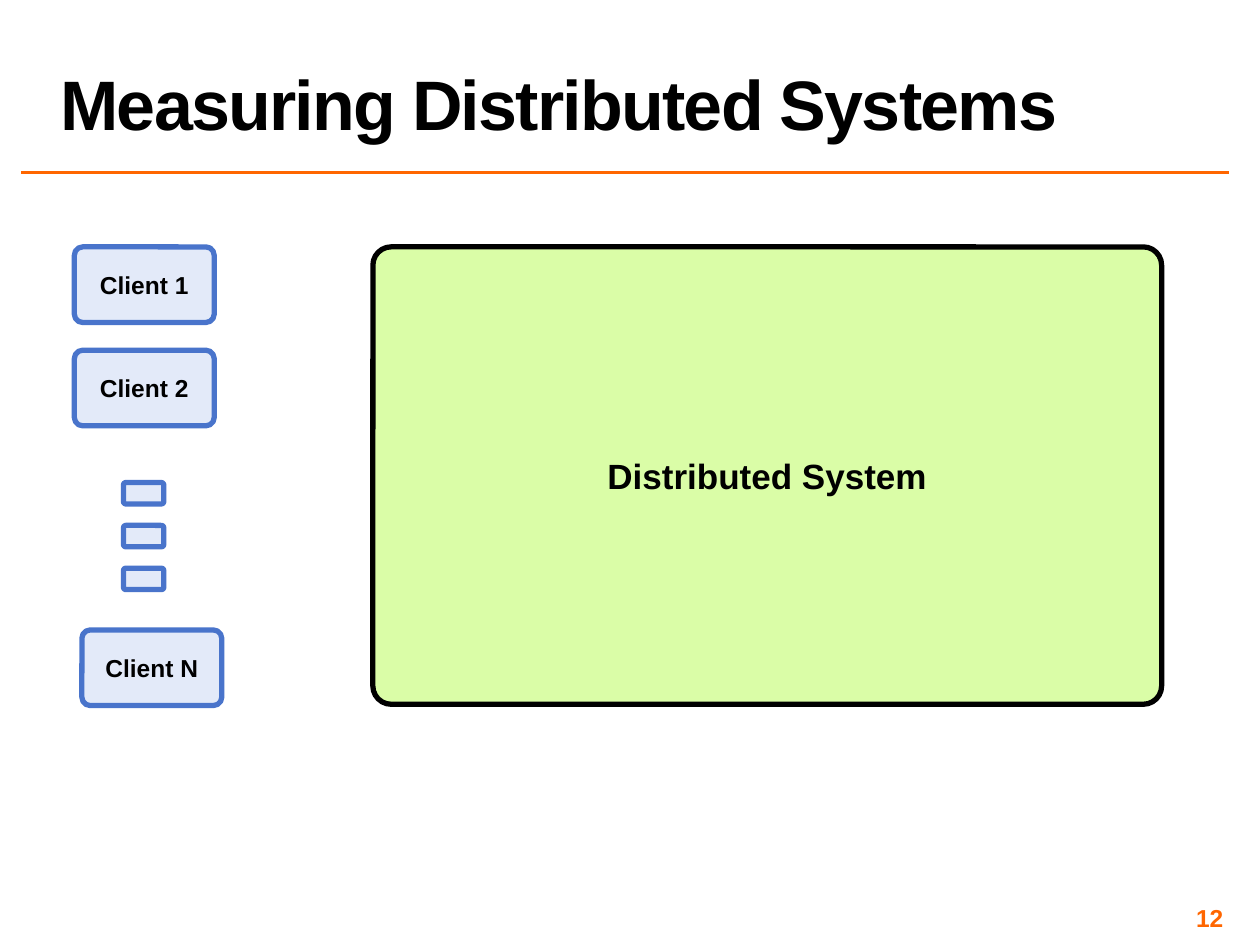
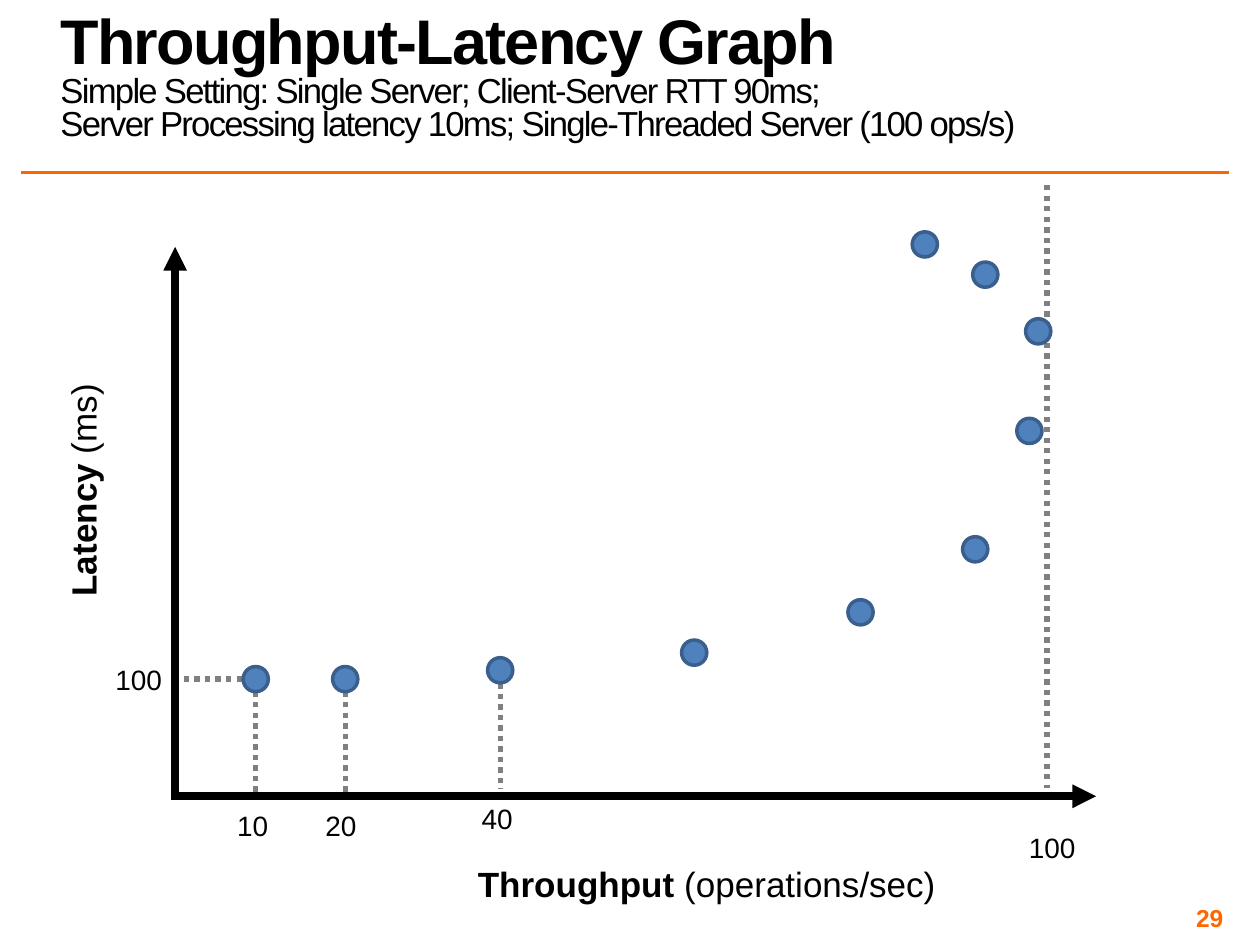
"""Build two slides on measuring distributed systems: client setup and throughput-latency graph."""
import pptx
import pptx.dml.color
import pptx.enum.dml
import pptx.enum.shapes
import pptx.enum.text
import pptx.oxml
import pptx.oxml.ns
import pptx.util

Inches, Pt = pptx.util.Inches, pptx.util.Pt
RGBColor = pptx.dml.color.RGBColor
PP_ALIGN = pptx.enum.text.PP_ALIGN
MSO_ANCHOR = pptx.enum.text.MSO_ANCHOR
MSO_AUTO_SIZE = pptx.enum.text.MSO_AUTO_SIZE
MSO_SHAPE = pptx.enum.shapes.MSO_SHAPE
MSO_LINE = pptx.enum.dml.MSO_LINE

BLACK = RGBColor(0x00, 0x00, 0x00)
ORANGE = RGBColor(0xFF, 0x66, 0x00)
GRAY = RGBColor(0x80, 0x80, 0x80)
CLIENT_FILL = RGBColor(0xE3, 0xEA, 0xF9)
CLIENT_LINE = RGBColor(0x49, 0x74, 0xCB)
SYSTEM_FILL = RGBColor(0xDA, 0xFD, 0xA7)
DOT_FILL = RGBColor(0x4F, 0x81, 0xBD)
DOT_LINE = RGBColor(0x3A, 0x5F, 0x8C)

TITLE_FRAME = {"vertical_anchor": MSO_ANCHOR.BOTTOM, "word_wrap": True,
               "auto_size": MSO_AUTO_SIZE.NONE}
NUMBER_FRAME = {"vertical_anchor": MSO_ANCHOR.MIDDLE, "word_wrap": True,
                "margin_left": Inches(0.04), "margin_right": Inches(0.04),
                "margin_top": Inches(0.04), "margin_bottom": Inches(0.04)}
LABEL_FRAME = {"word_wrap": False, "auto_size": MSO_AUTO_SIZE.SHAPE_TO_FIT_TEXT}
BOX_FRAME = {"vertical_anchor": MSO_ANCHOR.MIDDLE, "word_wrap": True}


def write(p, runs, size, align, color=BLACK):
    """Add (text, bold) runs to a paragraph."""
    p.alignment = align
    for text, bold in runs:
        r = p.add_run()
        r.text = text
        for name, value in {"name": "Arial", "size": Pt(size), "bold": bold}.items():
            setattr(r.font, name, value)
        r.font.color.rgb = color


def add_line(s, x1, y1, x2, y2, color, width, dash=None, arrow=False):
    """Draw a straight line, dotted or with an arrowhead if asked."""
    c = s.shapes.add_connector(pptx.enum.shapes.MSO_CONNECTOR.STRAIGHT,
                               Inches(x1), Inches(y1), Inches(x2), Inches(y2))
    c.line.color.rgb = color
    c.line.width = Pt(width)
    if dash:
        c.line.dash_style = dash
    if arrow:
        tail = pptx.oxml.parse_xml(f'<a:tailEnd {pptx.oxml.ns.nsdecls("a")} type="triangle"/>')
        c.line._get_or_add_ln().append(tail)
    c._element.spPr.append(
        pptx.oxml.parse_xml(f'<a:effectLst {pptx.oxml.ns.nsdecls("a")}/>'))


prs = pptx.Presentation()
prs.slide_width, prs.slide_height = Inches(10), Inches(7.5)

titles = [
    ("12", [("Measuring Distributed Systems", True, 40)]),
    ("29", [("Throughput-Latency Graph", True, 36),
            ("Simple Setting: Single Server; Client-Server RTT 90ms;", False, 19.8),
            ("Server Processing latency 10ms; Single-Threaded Server (100 ops/s)", False, 19.8)]),
]
for number, lines in titles:
    s = prs.slides.add_slide(prs.slide_layouts[5])
    add_line(s, 0.17, 1.37, 9.75, 1.37, ORANGE, 2)

    sp = s.shapes.title
    sp.left, sp.top, sp.width, sp.height = map(Inches, (0.38, 0.02, 9.37, 1.17))
    tf = sp.text_frame
    for name, value in TITLE_FRAME.items():
        setattr(tf, name, value)
    for i, (text, bold, size) in enumerate(lines):
        p = tf.add_paragraph() if i else tf.paragraphs[0]
        p.line_spacing = 0.8
        write(p, [(text, bold)], size, PP_ALIGN.LEFT)
        p.runs[0]._r.get_or_add_rPr().set("spc", "-100")

    sp = s.shapes.add_textbox(Inches(7.42), Inches(7.17), Inches(2.33), Inches(0.23))
    tf = sp.text_frame
    for name, value in NUMBER_FRAME.items():
        setattr(tf, name, value)
    write(tf.paragraphs[0], [(number, True)], 14, PP_ALIGN.RIGHT, ORANGE)

setup, graph = prs.slides

boxes = [(x, y, 1.11, 0.6, 0.11, CLIENT_FILL, CLIENT_LINE, text, 14)
         for x, y, text in [(0.59, 1.96, "Client 1"), (0.59, 2.78, "Client 2"),
                            (0.65, 5, "Client N")]]
boxes += [(0.98, 3.83 + 0.34 * i, 0.32, 0.17, 0.11, CLIENT_FILL, CLIENT_LINE, "", 14)
          for i in range(3)]
boxes.append((2.96, 1.96, 6.26, 3.63, 0.04, SYSTEM_FILL, BLACK, "Distributed System", 20))
for x, y, w, h, corner, fill, line, text, size in boxes:
    sp = setup.shapes.add_shape(MSO_SHAPE.ROUNDED_RECTANGLE,
                                Inches(x), Inches(y), Inches(w), Inches(h))
    sp.adjustments[0] = corner
    sp.shadow.inherit = False
    sp.fill.solid()
    sp.fill.fore_color.rgb = fill
    sp.line.color.rgb = line
    sp.line.width = Pt(3)
    if text:
        for name, value in BOX_FRAME.items():
            setattr(sp.text_frame, name, value)
        write(sp.text_frame.paragraphs[0], [(text, True)], size, PP_ALIGN.CENTER)

guides = [(1.46, 5.39, 2.03, 5.39), (2.03, 5.49, 2.03, 6.32), (2.74, 5.49, 2.74, 6.32),
          (3.97, 5.34, 3.97, 6.26), (8.31, 1.47, 8.31, 6.25)]
for ends in guides:
    add_line(graph, *ends, GRAY, 3, dash=MSO_LINE.ROUND_DOT)
for ends in [(1.39, 6.34, 1.39, 1.96), (1.36, 6.32, 8.7, 6.32)]:
    add_line(graph, *ends, BLACK, 4.5, arrow=True)

labels = [
    (-0.29, 3.67, 1.9, 0.44, 270, 20, [("Latency", True), (" (ms)", False)]),
    (3.68, 6.8, 3.86, 0.44, 0, 20, [("Throughput", True), (" (operations/sec)", False)]),
    (0.81, 5.21, 0.58, 0.37, 0, 16, [("100", False)]),
    (1.78, 6.37, 0.45, 0.37, 0, 16, [("10", False)]),
    (2.48, 6.37, 0.45, 0.37, 0, 16, [("20", False)]),
    (3.72, 6.31, 0.45, 0.37, 0, 16, [("40", False)]),
    (8.06, 6.54, 0.58, 0.37, 0, 16, [("100", False)]),
]
for x, y, w, h, rotation, size, runs in labels:
    sp = graph.shapes.add_textbox(Inches(x), Inches(y), Inches(w), Inches(h))
    sp.rotation = rotation
    for name, value in LABEL_FRAME.items():
        setattr(sp.text_frame, name, value)
    write(sp.text_frame.paragraphs[0], runs, size, PP_ALIGN.CENTER)

dots = [(1.93, 5.29), (2.64, 5.29), (3.87, 5.22), (5.41, 5.08), (6.73, 4.76),
        (7.64, 4.26), (8.07, 3.32), (8.14, 2.53), (7.72, 2.08), (7.24, 1.84)]
for x, y in dots:
    sp = graph.shapes.add_shape(MSO_SHAPE.OVAL, Inches(x), Inches(y), Inches(0.2), Inches(0.2))
    sp.shadow.inherit = False
    sp.fill.solid()
    sp.fill.fore_color.rgb = DOT_FILL
    sp.line.color.rgb = DOT_LINE
    sp.line.width = Pt(2)

prs.save("out.pptx")
